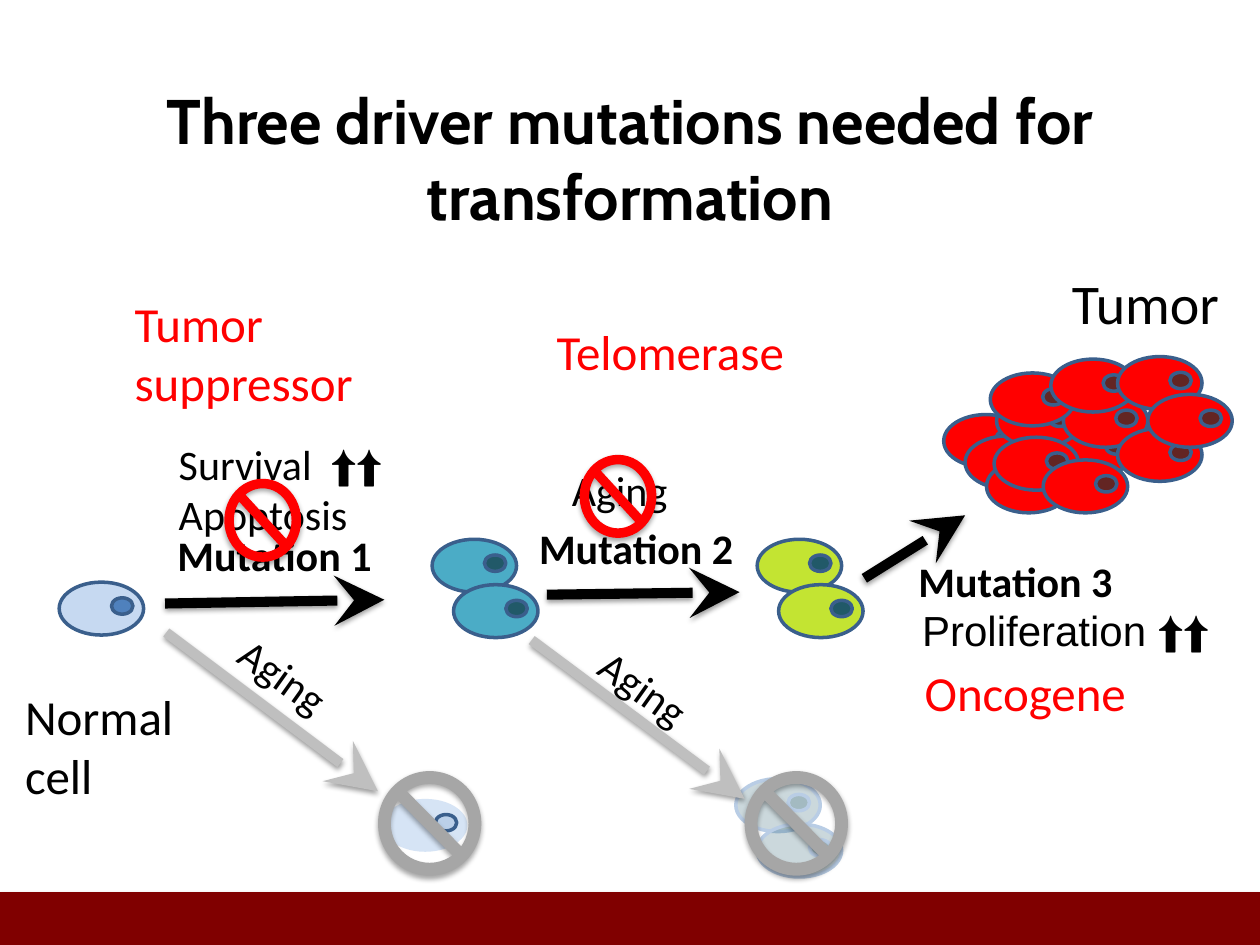
from lxml import etree
from pptx import Presentation
from pptx.dml.color import RGBColor
from pptx.enum import shapes, text
from pptx.oxml import ns
from pptx.util import Inches, Pt

HUES = {
    "black": "000000", "red": "FF0000", "bar": "800000", "edge": "3A5F8C",
    "pale": "C6D9F1", "blue": "4F81BD", "teal": "4BACC6", "deep": "215968",
    "lime": "C3E432", "wine": "632523", "mist": "B9CDE5",
    "gray": "A6A6A6", "light": "BFBFBF",
}
CELL = (0.67, 0.42)
CORE = (0.17, 0.13)
PAIR = [(0, 0), (0.17, 0.36)]
OVAL = shapes.MSO_SHAPE.OVAL
RECT = shapes.MSO_SHAPE.RECTANGLE
SIGN = shapes.MSO_SHAPE.NO_SYMBOL


def hue(name):
    return RGBColor.from_string(HUES[name])


def sub(node, tag, **attrs):
    return etree.SubElement(node, ns.qn(tag), **attrs)


def shade(effects, alpha, dist):
    """Soft shadow straight below."""
    drop = sub(effects, "a:outerShdw", blurRad=str(Pt(3.1)), dist=str(Pt(dist)),
               dir="5400000", rotWithShape="0")
    tone = sub(drop, "a:srgbClr", val=HUES["black"])
    sub(tone, "a:alpha", val=str(alpha * 1000))


def form(slide, kind, box, fill, line=None, alpha=None, drop=False):
    part = slide.shapes.add_shape(kind, *map(Inches, box))
    part.shadow.inherit = False
    part.fill.solid()
    part.fill.fore_color.rgb = hue(fill)
    if alpha:
        tone = part.fill._xPr.find(".//" + ns.qn("a:srgbClr"))
        sub(tone, "a:alpha", val=str(alpha * 1000))
    if line:
        part.line.color.rgb = hue(line)
        part.line.width = Pt(2)
    else:
        part.line.fill.background()
    if drop:
        shade(part._element.spPr.find(ns.qn("a:effectLst")), 35, 1.8)
    return part


def label(slide, box, lines, size=24, color="black", bold=False,
          font="Calibri", wrap=False, turn=0):
    part = slide.shapes.add_textbox(*map(Inches, box))
    part.rotation = turn
    frame = part.text_frame
    frame.word_wrap = wrap
    frame.auto_size = text.MSO_AUTO_SIZE.SHAPE_TO_FIT_TEXT
    for i, words in enumerate(lines):
        para = frame.paragraphs[0] if i == 0 else frame.add_paragraph()
        run = para.add_run()
        run.text = words
        run.font.name = font
        run.font.size = Pt(size)
        run.font.bold = bold
        run.font.color.rgb = hue(color)


def arrow(slide, start, end, color="black"):
    link = slide.shapes.add_connector(
        shapes.MSO_CONNECTOR.STRAIGHT, *map(Inches, (*start, *end)))
    link.line.color.rgb = hue(color)
    link.line.width = Pt(5.75)
    sub(link.line._get_or_add_ln(), "a:tailEnd", type="stealth", w="lg", len="lg")
    shade(sub(link._element.spPr, "a:effectLst"), 38, 1.6)


def ban(slide, box, color):
    sign = form(slide, SIGN, box, color, drop=True)
    sign.adjustments[0] = 0.124


def cells(slide, box, spots, fill, core, line="edge", rim="edge",
          alpha=None, dim=None):
    """Cells with a nucleus, at spots measured from the corner of the box."""
    x, y = box[:2]
    for dx, dy in spots:
        left, top = x + dx, y + dy
        form(slide, OVAL, (left, top, *CELL), fill, line, alpha)
        form(slide, OVAL, (left + 0.415, top + 0.125, *CORE), core, rim, dim)


def head(slide, box):
    title = slide.shapes.title
    title.left, title.top, title.width, title.height = map(Inches, box)
    frame = title.text_frame
    frame.word_wrap = True
    frame.vertical_anchor = text.MSO_ANCHOR.MIDDLE
    para = frame.paragraphs[0]
    para.alignment = text.PP_ALIGN.CENTER
    run = para.add_run()
    run.text = "Three driver mutations needed for transformation"
    run.font.name = "Cabin"
    run.font.size = Pt(36)
    run.font.bold = True
    run.font.color.rgb = hue("black")


def normal(slide, box):
    x, y, w, h = box
    cells(slide, box, [(0.37, 0)], "pale", "blue")
    label(slide, (x, y + 0.78, w, 1.04), ["Normal", "cell"], 28)


def tumor(slide, box):
    x, y, w, h = box
    spots = [(0.87, 1.27), (0, 1.21), (0.17, 1.38), (0.34, 1.57),
             (0.42, 1.05), (0.95, 1.05), (0.37, 0.88), (0.85, 0.77),
             (1.38, 1.32), (1.38, 0.75), (1.62, 1.05), (0.4, 1.39),
             (0.79, 1.57)]
    cells(slide, box, spots, "red", "wine")
    label(slide, (x + 0.92, y, 1.43, 0.64), ["Tumor"], 32)


def step(slide, box, name, start, end, tag=(0, 0)):
    """Mutation name and its black arrow."""
    x, y = box[:2]
    arrow(slide, (x + start[0], y + start[1]), (x + end[0], y + end[1]))
    label(slide, (x + tag[0], y + tag[1], 1.76, 0.5), [name], bold=True)


def decay(slide, box, spots, tag, **look):
    """Gray aging branch that ends in dead cells."""
    x, y, w, h = box
    cells(slide, (x + w, y + h), spots, **look)
    arrow(slide, (x, y), (x + w, y + h), "light")
    label(slide, (x + tag[0], y + tag[1], 0.99, 0.5), ["Aging"], turn=35.5)
    ban(slide, (x + w, 6.12, 0.82, 0.83), "gray")


def block(slide, box, lines, sign):
    """Process label struck out by a red sign."""
    x, y = box[:2]
    label(slide, box, lines)
    ban(slide, (x + sign[0], y + sign[1], 0.61, 0.66), "red")


def main():
    deck = Presentation()
    deck.slide_width, deck.slide_height = Inches(10), Inches(7.5)
    slide = deck.slides.add_slide(deck.slide_layouts[5])

    # Frame
    form(slide, RECT, (0, 7.08, 10, 0.42), "bar", drop=True)
    head(slide, (-0.1, 0.45, 10.2, 1.6))

    # Cell stages
    cells(slide, (3.43, 4.28), PAIR, "teal", "deep")
    tumor(slide, (7.49, 2.08, 2.35, 2))
    cells(slide, (6.01, 4.28), PAIR, "lime", "deep")
    normal(slide, (0.1, 4.62, 1.39, 1.82))

    # Aging branches
    decay(slide, (1.32, 5.02, 1.68, 1.26), [(0.04, 0.06)], (0.45, 0.1),
          fill="pale", core="blue", line=None, alpha=70, dim=20)
    decay(slide, (4.22, 5.08, 1.69, 1.26), [(dx - 0.07, dy - 0.16) for dx, dy in PAIR],
          (0.41, 0.14), fill="deep", core="deep", line="mist", rim="mist",
          alpha=23, dim=23)

    # Mutations
    step(slide, (1.31, 4.15), "Mutation 1", (0, 0.64), (1.74, 0.61))
    step(slide, (4.18, 4.1), "Mutation 2", (0.16, 0.62), (1.69, 0.6))
    step(slide, (6.86, 4.09), "Mutation 3", (0, 0.5), (0.8, 0), (0.33, 0.27))

    # Effects of each mutation
    block(slide, (1.32, 3.43, 2.02, 0.91), ["Survival  ⬆⬆", "Apoptosis"], (0.46, 0.37))
    block(slide, (4.44, 3.64, 0.97, 0.5), ["Aging"], (0.16, -0.03))
    label(slide, (7.22, 4.75, 2.69, 0.5), ["Proliferation ⬆⬆"], font="Arial")

    # Gene classes
    label(slide, (0.97, 2.28, 2.63, 1.04), ["Tumor suppressor"], 28, "red", wrap=True)
    label(slide, (4.32, 2.5, 2.07, 0.57), ["Telomerase"], 28, "red")
    label(slide, (7.24, 5.21, 1.82, 0.57), ["Oncogene"], 28, "red")

    deck.save("out.pptx")


if __name__ == "__main__":
    main()
